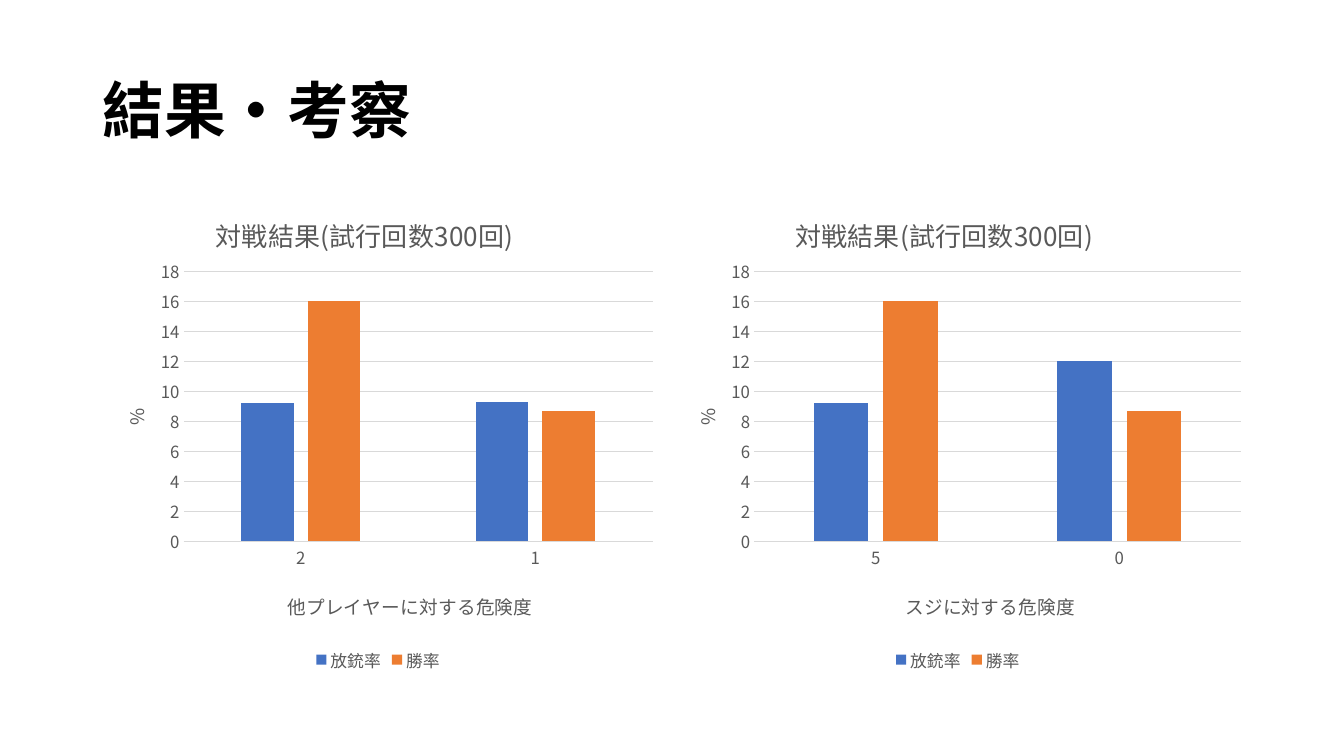
from lxml import etree
from pptx import Presentation
from pptx import util as u
from pptx.chart.data import CategoryChartData
from pptx.dml.color import RGBColor
from pptx.enum import chart as ch, text
from pptx.oxml.ns import qn

FONT = "Noto Sans CJK JP"
GREY, RULE = "595959", "D9D9D9"
RATE_COLORS = {"放銃率": "4472C4", "勝率": "ED7D31"}
LEFT, TOP, WIDTH = 0.92, 1.85, 11.5
TITLE_SIZE, AXIS_SIZE, LABEL_SIZE = 18.6, 13.3, 12
HEADING_WIDTH = 3.32


def color(hex_value):
    return RGBColor.from_string(hex_value)


def style(font, size, hex_value=GREY, bold=False):
    font.name, font.size, font.bold = FONT, u.Pt(size), bold
    font.color.rgb = color(hex_value)


def place(parent, after, **shares):
    """Give a chart part a fixed place, as shares of the chart's size."""
    for old in parent.findall(qn("c:layout")):
        parent.remove(old)
    layout = etree.Element(qn("c:layout"))
    manual = etree.SubElement(layout, qn("c:manualLayout"))
    settings = {"xMode": "edge", "yMode": "edge", **shares}
    if "w" in shares:
        settings = {"layoutTarget": "inner", **settings}
    for key, value in settings.items():
        etree.SubElement(manual, qn("c:" + key)).set("val", str(value))
    if after is None:
        parent.insert(0, layout)
    else:
        after.addnext(layout)


def add_label(owner, wording, size, x, y):
    """Title a chart or an axis at the given shares of the chart."""
    frame = (owner.chart_title if hasattr(owner, "chart_title") else owner.axis_title).text_frame
    frame.text = wording
    style(frame.paragraphs[0].font, size)
    title = frame._txBody.getparent().getparent()
    place(title, title.find(qn("c:tx")), x=round(x, 3), y=y)
    return frame


def add_heading(slide, left, top, width, height):
    frame = slide.shapes.add_textbox(*map(u.Inches, (left, top, width, height))).text_frame
    frame.word_wrap = True
    frame.vertical_anchor = text.MSO_ANCHOR.MIDDLE
    heading = frame.paragraphs[0]
    heading.text, heading.line_spacing = "結果・考察", 0.9
    style(heading.font, 44, "000000", bold=True)


def add_result_chart(slide, left, top, width, height, danger, levels, rates):
    data = CategoryChartData()
    data.categories = levels
    for name, values in rates.items():
        data.add_series(name, values)
    chart = slide.shapes.add_chart(
        ch.XL_CHART_TYPE.COLUMN_CLUSTERED,
        *map(u.Inches, (left, top, width, height)), data).chart
    style(chart.font, LABEL_SIZE)

    columns = chart.plots[0]
    columns.gap_width, columns.overlap, columns.vary_by_categories = 219, -27, False
    for series in columns.series:
        series.format.fill.solid()
        series.format.fill.fore_color.rgb = color(RATE_COLORS[series.name])

    level_axis, percent_axis = chart.category_axis, chart.value_axis
    for axis in (level_axis, percent_axis):
        axis.major_tick_mark = axis.minor_tick_mark = ch.XL_TICK_MARK.NONE
        style(axis.tick_labels.font, LABEL_SIZE)
    percent_axis.minimum_scale, percent_axis.maximum_scale, percent_axis.major_unit = 0, 18, 2
    percent_axis.format.line.fill.background()
    for line in (level_axis.format.line, percent_axis.major_gridlines.format.line):
        line.color.rgb, line.width = color(RULE), u.Pt(0.75)

    chart.has_legend = True
    chart.legend.position = ch.XL_LEGEND_POSITION.BOTTOM
    chart.legend.include_in_layout = False
    style(chart.legend.font, LABEL_SIZE)

    danger_width = len(danger) * AXIS_SIZE / 72
    add_label(chart, "対戦結果(試行回数300回)", TITLE_SIZE, 0.5 - HEADING_WIDTH / 2 / width, 0.044)
    add_label(level_axis, danger, AXIS_SIZE, 0.547 - danger_width / 2 / width, 0.818)
    percent = add_label(percent_axis, "%", AXIS_SIZE, 0.24 / width, 0.446)
    turned = percent._txBody.find(qn("a:bodyPr"))
    turned.set("rot", "-5400000")
    turned.set("vert", "horz")
    plot_area = columns._element.getparent()
    place(plot_area, None, x=round(0.9 / width, 3), y=0.173,
          w=round(1 - 1.01 / width, 3), h=0.551)


def main():
    deck = Presentation()
    deck.slide_width, deck.slide_height = u.Inches(13.33), u.Inches(7.5)
    slide = deck.slides.add_slide(deck.slide_layouts[6])
    add_heading(slide, LEFT, 0.4, WIDTH, 1.45)
    left = LEFT
    for width, danger, levels, deal_in in (
            (5.66, "他プレイヤーに対する危険度", ("2", "1"), (9.2, 9.3)),
            (5.84, "スジに対する危険度", ("5", "0"), (9.2, 12))):
        rates = {"放銃率": deal_in, "勝率": (16, 8.7)}
        add_result_chart(slide, left, TOP, width, 4.86, danger, levels, rates)
        left += width
    deck.save("out.pptx")


if __name__ == "__main__":
    main()
